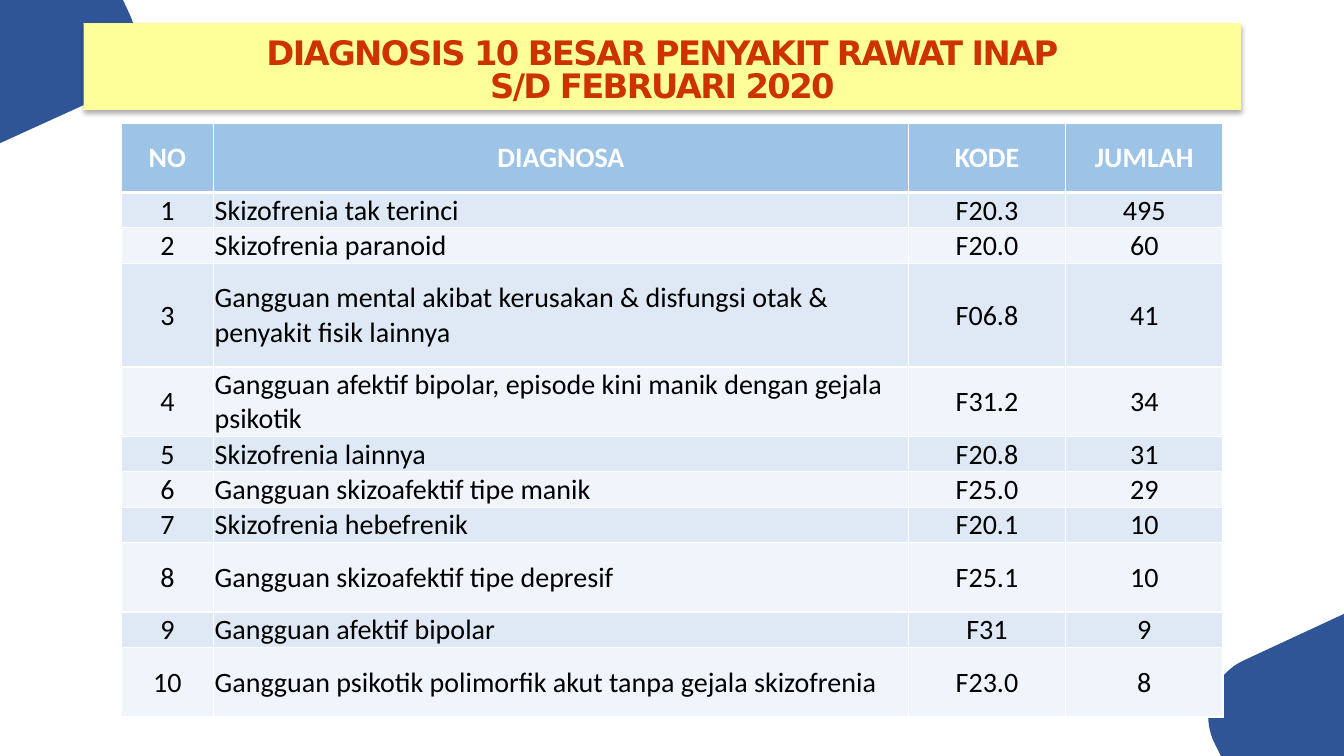
from lxml import etree
from pptx import Presentation, util as u
from pptx.dml.color import RGBColor
from pptx.enum import shapes, text
from pptx.oxml import ns

CENTER, LEFT = text.PP_ALIGN.CENTER, text.PP_ALIGN.LEFT
MIDDLE, BOTTOM = text.MSO_ANCHOR.MIDDLE, text.MSO_ANCHOR.BOTTOM
HEADINGS = ("NO", "DIAGNOSA", "KODE", "JUMLAH")
DIAGNOSES = [
    ("Skizofrenia tak terinci", "F20.3", 495),
    ("Skizofrenia paranoid", "F20.0", 60),
    ("Gangguan mental akibat kerusakan & disfungsi otak & penyakit fisik lainnya", "F06.8", 41),
    ("Gangguan afektif bipolar, episode kini manik dengan gejala psikotik", "F31.2", 34),
    ("Skizofrenia lainnya", "F20.8", 31),
    ("Gangguan skizoafektif tipe manik", "F25.0", 29),
    ("Skizofrenia hebefrenik", "F20.1", 10),
    ("Gangguan skizoafektif tipe depresif", "F25.1", 10),
    ("Gangguan afektif bipolar", "F31", 9),
    ("Gangguan psikotik polimorfik akut tanpa gejala skizofrenia", "F23.0", 8),
]
COLUMN_WIDTHS = (0.92, 6.89, 1.56, 1.56)
LINE_HEIGHT = 0.35
ROW_HEIGHTS = {0: 0.69, 3: 1.03, 4: 0.69, 8: 0.69, 10: 0.69}
BOTTOM_ROWS = (7, 9)


def color(value):
    return RGBColor.from_string(value)


def add_xml(parent, tag, **attributes):
    child = etree.SubElement(parent, ns.qn(tag))
    for name, value in attributes.items():
        child.set(name, str(value))
    return child


def bezier(start, first, second, end, steps=24):
    for step in range(1, steps + 1):
        t = step / steps
        weights = ((1 - t) ** 3, 3 * t * (1 - t) ** 2, 3 * t * t * (1 - t), t ** 3)
        yield tuple(
            sum(w * point[axis] for w, point in zip(weights, (start, first, second, end)))
            for axis in (0, 1)
        )


class SlideBuilder:
    blue = "2F5597"
    yellow = "FFFF99"
    header_fill = "9DC3E6"
    bands = ("EFF5FA", "DFE9F5")
    title_format = {"name": "DejaVu Sans", "size": u.Pt(24.1), "bold": True}
    header_format = {"name": "Calibri", "size": u.Pt(20), "bold": True}
    body_format = {**header_format, "bold": False}
    cell_margins = {"margin_left": 0.01, "margin_top": 0.01, "margin_right": 0.01, "margin_bottom": 0}

    def __init__(self, deck):
        self.page = deck.slides.add_slide(deck.slide_layouts[6])

    def format_spans(self, para, formats, font_color):
        for span in para.runs:
            for name, value in formats.items():
                setattr(span.font, name, value)
            span.font.color.rgb = color(font_color)

    def corner(self, points, curve, closing):
        outline = [*points, *bezier(points[-1], *curve), closing]
        outline = [(u.Inches(x), u.Inches(y)) for x, y in outline]
        builder = self.page.shapes.build_freeform(*outline[0])
        builder.add_line_segments(outline[1:], close=True)
        box = builder.convert_to_shape()
        box.shadow.inherit = False
        box.fill.solid()
        box.fill.fore_color.rgb = color(self.blue)
        box.line.fill.background()

    def title(self, wording, *place):
        box = self.page.shapes.add_shape(
            shapes.MSO_SHAPE.RECTANGLE, *(u.Inches(length) for length in place))
        box.fill.solid()
        box.fill.fore_color.rgb = color(self.yellow)
        box.line.fill.background()
        box.shadow.inherit = False
        effects = box._element.spPr.find(ns.qn("a:effectLst"))
        shadow = add_xml(effects, "a:outerShdw", blurRad=u.Pt(3.5), dist=u.Pt(2.2),
                         dir=5400000, algn="t", rotWithShape=0)
        add_xml(add_xml(shadow, "a:srgbClr", val="000000"), "a:alpha", val=32000)
        frame = box.text_frame
        frame.word_wrap = True
        frame.vertical_anchor = BOTTOM
        para = frame.paragraphs[0]
        para.text = wording
        para.alignment = CENTER
        para.line_spacing = 0.8
        self.format_spans(para, self.title_format, "CC3300")
        for span in para.runs:
            span._r.get_or_add_rPr().set("spc", "-120")

    def borders(self, cell, row):
        properties = cell._tc.get_or_add_tcPr()
        widths = {"L": 1, "R": 1, "T": 3 if row == 1 else 1, "B": 3 if row == 0 else 1}
        for side, width in widths.items():
            line = add_xml(properties, f"a:ln{side}", w=u.Pt(width))
            add_xml(add_xml(line, "a:solidFill"), "a:srgbClr", val="FFFFFF")

    def cell(self, cell, value, row, column):
        header = row == 0
        self.borders(cell, row)
        cell.fill.solid()
        cell.fill.fore_color.rgb = color(self.header_fill if header else self.bands[row % 2])
        for name, value_inches in self.cell_margins.items():
            setattr(cell, name, u.Inches(value_inches))
        cell.vertical_anchor = BOTTOM if row in BOTTOM_ROWS and column in (1, 2) else MIDDLE
        para = cell.text_frame.paragraphs[0]
        para.text = str(value)
        para.alignment = LEFT if column == 1 and not header else CENTER
        self.format_spans(para, self.header_format if header else self.body_format,
                          "FFFFFF" if header else "000000")

    def table(self, records, left, top):
        heights = [ROW_HEIGHTS.get(row, LINE_HEIGHT) for row in range(len(records))]
        table = self.page.shapes.add_table(
            len(records), len(COLUMN_WIDTHS), u.Inches(left), u.Inches(top),
            u.Inches(sum(COLUMN_WIDTHS)), u.Inches(sum(heights))).table
        table.horz_banding = False
        for column, width in zip(table.columns, COLUMN_WIDTHS):
            column.width = u.Inches(width)
        for row, record in enumerate(records):
            table.rows[row].height = u.Inches(heights[row])
            for column, value in enumerate(record):
                self.cell(table.cell(row, column), value, row, column)


def main():
    deck = Presentation()
    deck.slide_width, deck.slide_height = u.Inches(13.33), u.Inches(7.5)
    slide = SlideBuilder(deck)
    slide.corner([(13.33, 7.5), (12.11, 7.5), (12.04, 7.36)],
                 [(11.9, 7.06), (12.03, 6.69), (12.34, 6.55)], (13.33, 6.09))
    slide.corner([(0, 0), (1.22, 0), (1.29, 0.15)],
                 [(1.43, 0.46), (1.29, 0.83), (0.99, 0.97)], (0, 1.42))
    slide.title("DIAGNOSIS 10 BESAR PENYAKIT RAWAT INAP\vS/D FEBRUARI 2020",
                0.83, 0.23, 11.48, 0.86)
    numbered = [(number, *record) for number, record in enumerate(DIAGNOSES, 1)]
    slide.table([HEADINGS, *numbered], 1.2, 1.22)
    deck.save("out.pptx")


if __name__ == "__main__":
    main()
